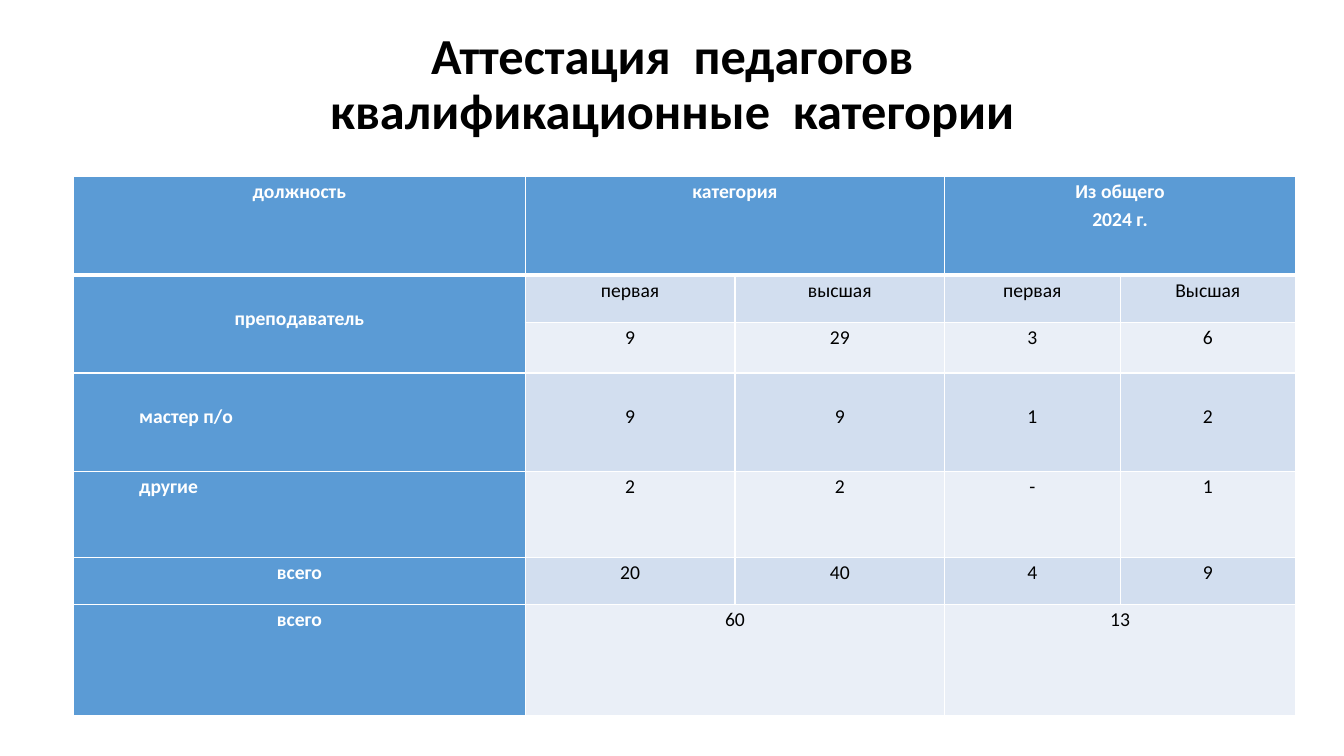
from lxml.etree import SubElement
from pptx import Presentation
from pptx.dml.color import RGBColor
from pptx.enum.text import MSO_ANCHOR as Anchor, PP_ALIGN as Align
from pptx.oxml.ns import qn
from pptx.util import Inches, Pt

FONT = "Calibri"
WHITE, BLACK, BLUE = "FFFFFF", "000000", "5B9BD5"
BANDS = ["EAEFF7", "D2DEEF"]

COLUMN_WIDTHS = [4.48, 2.08, 2.08, 1.74, 1.74]
ROW_HEIGHTS = [0.98, 0.47, 0.5, 0.98, 0.85, 0.47, 1.1]
ROWS = [
    ["должность", "категория", "", "Из общего\n2024 г.", ""],
    ["преподаватель", "первая", "высшая", "первая", "Высшая"],
    ["", "9", "29", "3", "6"],
    ["мастер п/о", "9", "9", "1", "2"],
    ["другие", "2", "2", "-", "1"],
    ["всего", "20", "40", "4", "9"],
    ["всего", "60", "", "13", ""],
]
# Pairs of corner cells (row, column)
MERGES = [((0, 1), (0, 2)), ((0, 3), (0, 4)), ((1, 0), (2, 0)),
          ((6, 1), (6, 2)), ((6, 3), (6, 4))]
LOWERED_ROWS = {3}
LOWERED_CELLS = {(1, 0)}
INDENTED_CELLS = {(3, 0), (4, 0)}
ONE_LINE, INDENT, SIDE_MARGIN = 0.28, 0.65, 0.07


def color(code):
    return RGBColor.from_string(code)


def format_text(frame, size, ink, bold, spacing, align=Align.CENTER):
    for para in frame.paragraphs:
        para.alignment = align
        para.line_spacing = spacing
        for span in para.runs:
            span.font.name = FONT
            span.font.size = Pt(size)
            span.font.bold = bold
            span.font.color.rgb = color(ink)


def add_title(page, left, top, width, height):
    box = page.shapes.add_textbox(Inches(left), Inches(top), Inches(width), Inches(height))
    frame = box.text_frame
    frame.word_wrap = True
    frame.vertical_anchor = Anchor.MIDDLE
    frame.margin_bottom = Inches(0.6)  # lifts the two lines above the middle
    frame.paragraphs[0].text = "Аттестация  педагогов\vквалификационные  категории"
    format_text(frame, 36, BLACK, True, 0.9)


def set_borders(cell, bottom_width):
    properties = cell._tc.get_or_add_tcPr()
    for index, side in enumerate(["lnL", "lnR", "lnT", "lnB"]):
        width = bottom_width if side == "lnB" else 1
        line = SubElement(properties, qn(f"a:{side}"), w=str(Pt(width)))
        fill = SubElement(line, qn("a:solidFill"))
        SubElement(fill, qn("a:srgbClr"), val=WHITE)
        properties.insert(index, line)


def style_cell(cell, row, column):
    heading = row == 0 or column == 0
    lowered = row in LOWERED_ROWS or (row, column) in LOWERED_CELLS
    indented = (row, column) in INDENTED_CELLS
    cell.margin_left = Inches(INDENT if indented else SIDE_MARGIN)
    cell.margin_right = Inches(SIDE_MARGIN)
    cell.margin_top = Inches(ONE_LINE if lowered else 0)
    cell.margin_bottom = 0
    cell.vertical_anchor = Anchor.TOP
    cell.fill.solid()
    cell.fill.fore_color.rgb = color(BLUE if heading else BANDS[row % 2])
    set_borders(cell, 3 if row == 0 else 1)
    format_text(cell.text_frame, 14, WHITE if heading else BLACK, heading, 1.15,
                Align.LEFT if indented else Align.CENTER)


def add_category_table(page, left, top):
    frame = page.shapes.add_table(
        len(ROWS), len(COLUMN_WIDTHS), Inches(left), Inches(top),
        Inches(sum(COLUMN_WIDTHS)), Inches(sum(ROW_HEIGHTS)))
    table = frame.table
    for column, width in zip(table.columns, COLUMN_WIDTHS):
        column.width = Inches(width)
    for row, height in zip(table.rows, ROW_HEIGHTS):
        row.height = Inches(height)
    for start, end in MERGES:
        table.cell(*start).merge(table.cell(*end))
    for row, texts in enumerate(ROWS):
        for column, text in enumerate(texts):
            cell = table.cell(row, column)
            if text:
                cell.text_frame.text = text
            style_cell(cell, row, column)


def main():
    deck = Presentation()
    deck.slide_width, deck.slide_height = Inches(13.33), Inches(7.5)
    page = deck.slides.add_slide(deck.slide_layouts[6])
    add_title(page, 0.92, 0.4, 11.5, 1.45)
    add_category_table(page, 0.73, 1.75)
    deck.save("out.pptx")


if __name__ == "__main__":
    main()
